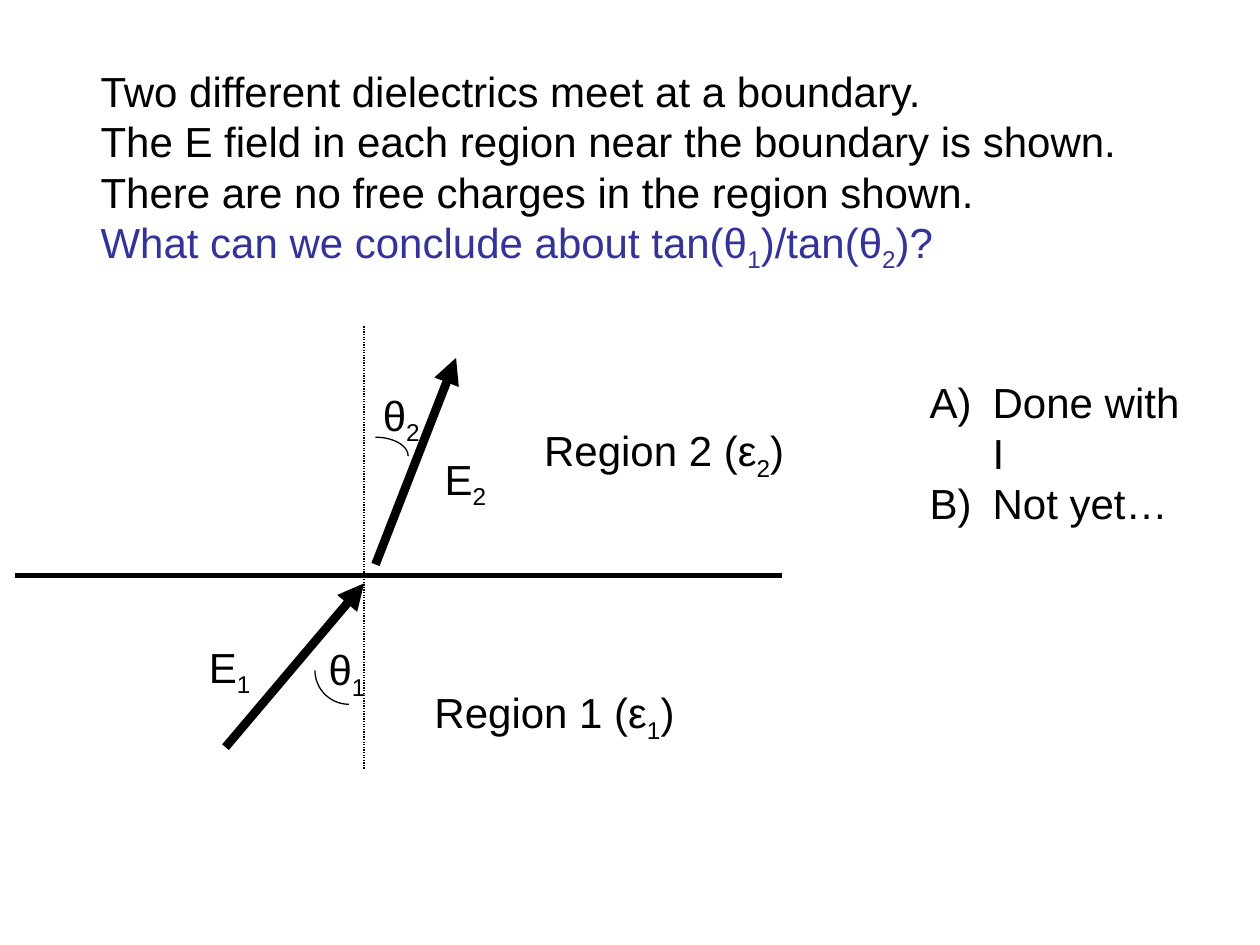
from dataclasses import dataclass
from math import cos, radians, sin

from lxml.etree import SubElement
from pptx import Presentation
from pptx.dml.color import RGBColor
from pptx.enum.dml import MSO_LINE
from pptx.enum.shapes import MSO_CONNECTOR
from pptx.enum.text import MSO_ANCHOR, MSO_AUTO_SIZE
from pptx.oxml.ns import qn
from pptx.util import Inches, Pt


@dataclass(frozen=True)
class Theme:
    ink: RGBColor = RGBColor(0x00, 0x00, 0x00)
    question: RGBColor = RGBColor(0x33, 0x33, 0x99)
    font: str = "Arial"
    size: float = 24
    thin: float = 0.75
    boundary: float = 3
    field: float = 5


def add_text(paragraph, text, font, size, color):
    """Add text; a digit after "_" is a subscript, a newline is a line break."""

    def add_run(content, subscript=False):
        run = paragraph.add_run()
        run.text = content
        run.font.name = font
        run.font.size = Pt(size)
        run.font.color.rgb = color
        if subscript:
            run._r.get_or_add_rPr().set("baseline", "-25000")

    for number, line in enumerate(text.split("\n")):
        if number:
            paragraph.add_line_break()
        first, *others = line.split("_")
        if first:
            add_run(first)
        for part in others:
            add_run(part[0], subscript=True)
            if part[1:]:
                add_run(part[1:])


class SlideBuilder:
    def __init__(self, slide, theme):
        self.slide = slide
        self.theme = theme

    def styled_text(self, paragraph, text, color=None):
        add_text(paragraph, text, font=self.theme.font, size=self.theme.size,
                 color=color or self.theme.ink)

    def text_box(self, left, top, width, height, wrap=True):
        shape = self.slide.shapes.add_textbox(
            Inches(left), Inches(top), Inches(width), Inches(height))
        shape.text_frame.word_wrap = wrap
        return shape.text_frame

    def label(self, left, top, width, text):
        frame = self.text_box(left, top, width, 0.5, wrap=False)
        frame.auto_size = MSO_AUTO_SIZE.SHAPE_TO_FIT_TEXT
        self.styled_text(frame.paragraphs[0], text)

    def lettered_list(self, left, top, width, height, items):
        frame = self.text_box(left, top, width, height)
        frame.auto_size = MSO_AUTO_SIZE.SHAPE_TO_FIT_TEXT
        for number, item in enumerate(items):
            paragraph = frame.add_paragraph() if number else frame.paragraphs[0]
            properties = paragraph._p.get_or_add_pPr()
            properties.set("marL", str(Inches(0.5)))
            properties.set("indent", str(-Inches(0.5)))
            SubElement(properties, qn("a:buFont"), typeface=self.theme.font)
            SubElement(properties, qn("a:buAutoNum"), type="alphaUcParenR")
            self.styled_text(paragraph, item)

    def line(self, start, end, width, arrow=False, dash=None):
        connector = self.slide.shapes.add_connector(
            MSO_CONNECTOR.STRAIGHT, *map(Inches, start + end))
        connector.line.color.rgb = self.theme.ink
        connector.line.width = Pt(width)
        if dash:
            connector.line.dash_style = dash
        if arrow:
            SubElement(connector.line._get_or_add_ln(), qn("a:tailEnd"),
                       type="triangle")
        SubElement(connector._element.spPr, qn("a:effectLst"))

    def quarter_arc(self, center, radius_x, radius_y, start):
        """Draw 90 degrees of an ellipse, clockwise from the start angle."""
        points = [(Inches(center[0] + radius_x * cos(radians(angle))),
                   Inches(center[1] + radius_y * sin(radians(angle))))
                  for angle in range(start, start + 91, 5)]
        builder = self.slide.shapes.build_freeform(*points[0])
        builder.add_line_segments(points[1:], close=False)
        shape = builder.convert_to_shape()
        shape.shadow.inherit = False
        shape.fill.background()
        shape.line.color.rgb = self.theme.ink
        shape.line.width = Pt(self.theme.thin)


def main():
    presentation = Presentation()
    presentation.slide_width = Inches(10)
    presentation.slide_height = Inches(7.5)
    theme = Theme()
    slide = presentation.slides.add_slide(presentation.slide_layouts[6])
    builder = SlideBuilder(slide, theme)

    # Boundary, normal and field vectors
    builder.line((0.12, 4.57), (6.21, 4.57), theme.boundary)
    builder.line((1.79, 5.93), (2.89, 4.63), theme.field, arrow=True)
    builder.line((2.98, 4.48), (3.62, 2.84), theme.field, arrow=True)
    builder.line((2.89, 2.59), (2.89, 6.11), theme.thin,
                 dash=MSO_LINE.ROUND_DOT)

    # Angle arcs
    builder.quarter_arc((2.98, 3.62), 0.26, 0.15, start=270)
    builder.quarter_arc((2.77, 5.32), 0.27, 0.27, start=90)

    # Problem statement
    statement = builder.text_box(0.7, 0.72, 8.5, 1.25)
    statement.vertical_anchor = MSO_ANCHOR.MIDDLE
    paragraph = statement.paragraphs[0]
    builder.styled_text(
        paragraph,
        "Two different dielectrics meet at a boundary.\n"
        "The E field in each region near the boundary is shown.\n"
        "There are no free charges in the region shown.")
    paragraph.add_line_break()
    builder.styled_text(
        paragraph, "What can we conclude about tan(θ_1)/tan(θ_2)?",
        color=theme.question)

    # Diagram labels
    for left, top, width, text in (
        (3.35, 5.4, 2.13, "Region 1 (ε_1)"),
        (4.22, 3.32, 2.13, "Region 2 (ε_2)"),
        (2.94, 3.04, 0.5, "θ_2"),
        (2.51, 5.06, 0.5, "θ_1"),
        (3.43, 3.55, 0.55, "E_2"),
        (1.56, 5.04, 0.55, "E_1"),
    ):
        builder.label(left, top, width, text)

    # Answer choices
    builder.lettered_list(7.28, 2.94, 2.36, 0.91, ("Done with I", "Not yet…"))

    presentation.save("out.pptx")


if __name__ == "__main__":
    main()
